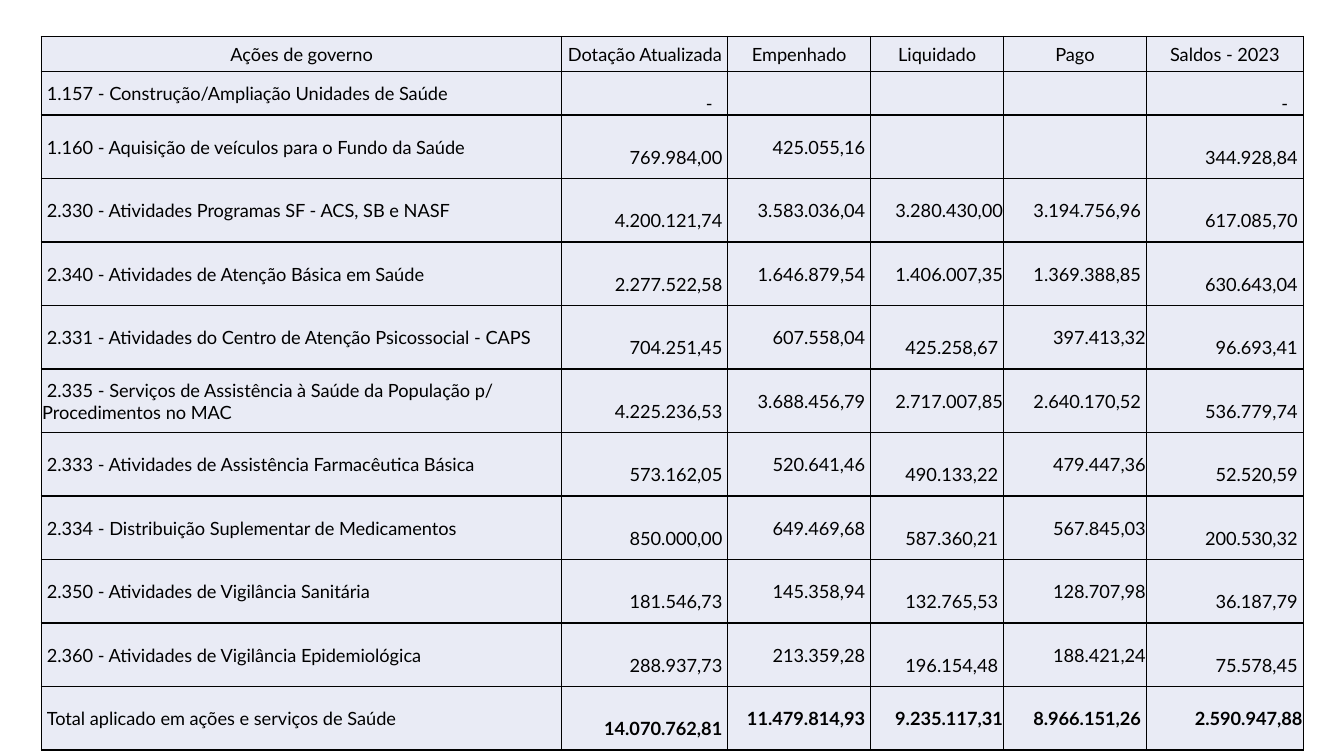
from lxml import etree
from pptx import Presentation
from pptx.dml.color import RGBColor
from pptx.enum.text import MSO_ANCHOR, PP_ALIGN
from pptx.oxml.ns import qn
from pptx.util import Cm, Pt

MIDDLE = MSO_ANCHOR.MIDDLE
LEFT, CENTER, RIGHT = PP_ALIGN.LEFT, PP_ALIGN.CENTER, PP_ALIGN.RIGHT
BLACK, PALE_BLUE = "000000", "E9EBF5"
ACTION, BUDGET, COMMITTED, SETTLED, PAID, BALANCE = range(6)


def color(value):
    return RGBColor.from_string(value)


def add_borders(cell):
    properties = cell._tc.get_or_add_tcPr()
    for side in ("a:lnL", "a:lnR", "a:lnT", "a:lnB"):
        line = etree.SubElement(properties, qn(side), w=str(Pt(1)))
        fill = etree.SubElement(line, qn("a:solidFill"))
        etree.SubElement(fill, qn("a:srgbClr"), val=BLACK)


# Budget execution by government action
budget_rows = [
    ("Ações de governo", "Dotação Atualizada", "Empenhado", "Liquidado", "Pago", "Saldos - 2023"),
    ("1.157 - Construção/Ampliação Unidades de Saúde", "-", "", "", "", "-"),
    ("1.160 - Aquisição de veículos para o Fundo da Saúde",
     "769.984,00", "425.055,16", "", "", "344.928,84"),
    ("2.330 - Atividades Programas SF - ACS, SB e NASF",
     "4.200.121,74", "3.583.036,04", "3.280.430,00", "3.194.756,96", "617.085,70"),
    ("2.340 - Atividades de Atenção Básica em Saúde",
     "2.277.522,58", "1.646.879,54", "1.406.007,35", "1.369.388,85", "630.643,04"),
    ("2.331 - Atividades do Centro de Atenção Psicossocial - CAPS",
     "704.251,45", "607.558,04", "425.258,67", "397.413,32", "96.693,41"),
    ("2.335 - Serviços de Assistência à Saúde da População p/ Procedimentos no MAC",
     "4.225.236,53", "3.688.456,79", "2.717.007,85", "2.640.170,52", "536.779,74"),
    ("2.333 - Atividades de Assistência Farmacêutica Básica",
     "573.162,05", "520.641,46", "490.133,22", "479.447,36", "52.520,59"),
    ("2.334 - Distribuição Suplementar de Medicamentos",
     "850.000,00", "649.469,68", "587.360,21", "567.845,03", "200.530,32"),
    ("2.350 - Atividades de Vigilância Sanitária",
     "181.546,73", "145.358,94", "132.765,53", "128.707,98", "36.187,79"),
    ("2.360 - Atividades de Vigilância Epidemiológica",
     "288.937,73", "213.359,28", "196.154,48", "188.421,24", "75.578,45"),
    ("Total aplicado em ações e serviços de Saúde",
     "14.070.762,81", "11.479.814,93", "9.235.117,31", "8.966.151,26", "2.590.947,88"),
]
column_widths = [13.12, 4.18, 3.6, 3.35, 3.6, 3.95]
row_heights = [0.88, 1.1] + [1.6] * 10
total_row = len(budget_rows) - 1

presentation = Presentation()
presentation.slide_width, presentation.slide_height = Cm(33.87), Cm(19.05)
slide = presentation.slides.add_slide(presentation.slide_layouts[6])

# Table grid
budget = slide.shapes.add_table(
    len(budget_rows), len(column_widths), Cm(1.04), Cm(0.92),
    Cm(sum(column_widths)), Cm(sum(row_heights))).table
budget.first_row = budget.horz_banding = False
for column, width in zip(budget.columns, column_widths):
    column.width = Cm(width)
for row, height in zip(budget.rows, row_heights):
    row.height = Cm(height)

# Cells
for r, values in enumerate(budget_rows):
    for c, value in enumerate(values):
        cell = budget.cell(r, c)
        add_borders(cell)
        cell.fill.solid()
        cell.fill.fore_color.rgb = color(PALE_BLUE)
        cell.vertical_anchor = MIDDLE
        cell.margin_left = cell.margin_right = cell.margin_top = Cm(0.02)
        cell.margin_bottom = 0
        paragraph = cell.text_frame.paragraphs[0]
        paragraph.text = value

        if r == 0:
            paragraph.alignment = CENTER
        elif c == ACTION:
            paragraph.alignment = LEFT
            paragraph._p.get_or_add_pPr().set("indent", str(Cm(0.12)))
        else:
            # Amounts sit low or flush right depending on column and length
            paragraph.alignment = RIGHT
            long_amount = len(value) > 10
            grand_balance = r == total_row and c == BALANCE
            low = (c in (BUDGET, BALANCE) and not grand_balance) or (
                c == SETTLED and not long_amount)
            flush = grand_balance or (c == SETTLED and long_amount) or (
                c == PAID and not long_amount)
            if low and value:
                cell.margin_top = Cm(0.53)
            if not flush:
                cell.margin_right = Cm(0.38 if value == "-" else 0.14)

        for run in paragraph.runs:
            run.font.name = "Lato"
            run.font.size = Pt(13)
            run.font.bold = r == total_row and c != ACTION
            run.font.color.rgb = color(BLACK)

presentation.save("out.pptx")
